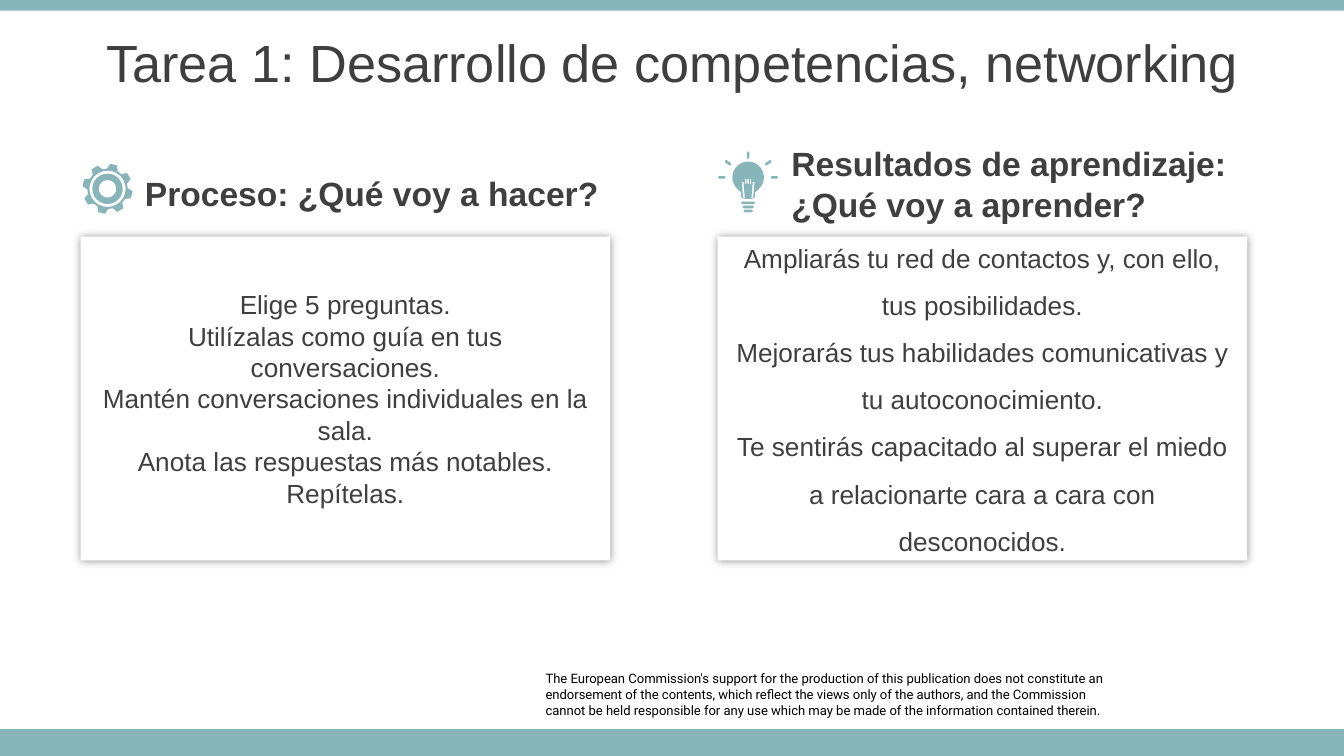
"""Build the task slide on a grid of 100 columns by 56.25 rows."""
import dataclasses
import math
import typing

import lxml.etree
import pptx
import pptx.dml.color
import pptx.enum.shapes
import pptx.enum.text
import pptx.oxml.ns
import pptx.util

TEAL = pptx.dml.color.RGBColor(0x87, 0xB5, 0xBA)
WHITE = pptx.dml.color.RGBColor(0xFF, 0xFF, 0xFF)
BLACK = pptx.dml.color.RGBColor(0x00, 0x00, 0x00)
GRAY = pptx.dml.color.RGBColor(0x3F, 0x3F, 0x3F)
COLUMNS, ROWS = 100, 56.25
CENTER = pptx.enum.text.PP_ALIGN.CENTER
LEFT = pptx.enum.text.PP_ALIGN.LEFT
MIDDLE = pptx.enum.text.MSO_ANCHOR.MIDDLE
Point = tuple[float, float]
Contour = list[Point]


@dataclasses.dataclass(frozen=True)
class Area:
    """A rectangle in grid cells."""
    column: float
    row: float
    columns: float
    rows: float

    def lengths(self) -> tuple[int, int, int, int]:
        """Return left, top, width and height."""
        return cells(self.column), cells(self.row), cells(self.columns), cells(self.rows)


@dataclasses.dataclass(frozen=True)
class TextStyle:
    """The look of a text."""
    size: float
    font: str = "Arial"
    color: pptx.dml.color.RGBColor = GRAY
    bold: bool = False
    alignment: typing.Any = LEFT
    line_spacing: float = 1.0


@dataclasses.dataclass(frozen=True)
class Panel:
    """A heading above a shadowed card."""
    column: float
    heading: str
    heading_area: Area
    lines: tuple[str, ...]
    line_spacing: float
    bottom_inset: float


HEADING = TextStyle(18, bold=True)
PANELS = (
    Panel(6, "Proceso: ¿Qué voy a hacer?", Area(9.8, 12.8, 40.2, 3.1),
          ("Elige 5 preguntas.",
           "Utilízalas como guía en tus conversaciones.",
           "Mantén conversaciones individuales en la sala.",
           "Anota las respuestas más notables.",
           "Repítelas."), 1.0, 0.5),
    Panel(53.4, "Resultados de aprendizaje: ¿Qué voy a aprender?", Area(57.9, 12.1, 35.6, 3.1),
          ("Ampliarás tu red de contactos y, con ello, tus posibilidades.",
           "Mejorarás tus habilidades comunicativas y tu autoconocimiento.",
           "Te sentirás capacitado al superar el miedo a relacionarte cara a cara con desconocidos."),
          1.5, 1.5),
)
DISCLAIMER = (
    "The European Commission's support for the production of this publication does not constitute an "
    "endorsement of the contents, which reflect the views only of the authors, and the Commission",
    "cannot be held responsible for any use which may be made of the information contained therein.",
)


def cells(count: float) -> int:
    """Convert grid cells to a length."""
    return pptx.util.Inches(count / 10)


def write(shape: typing.Any, lines: typing.Sequence[str], style: TextStyle) -> None:
    """Write one paragraph per line."""
    frame = shape.text_frame
    frame.word_wrap = True
    frame.auto_size = pptx.enum.text.MSO_AUTO_SIZE.NONE
    frame.vertical_anchor = MIDDLE
    for index, line in enumerate(lines):
        paragraph = frame.add_paragraph() if index else frame.paragraphs[0]
        paragraph.alignment = style.alignment
        paragraph.line_spacing = style.line_spacing
        run = paragraph.add_run()
        run.text = line
        run.font.name = style.font
        run.font.size = pptx.util.Pt(style.size)
        run.font.bold = style.bold
        run.font.color.rgb = style.color


def paint(shape: typing.Any, color: pptx.dml.color.RGBColor) -> None:
    """Give a shape a plain fill without line or shadow."""
    shape.shadow.inherit = False
    shape.fill.solid()
    shape.fill.fore_color.rgb = color
    shape.line.fill.background()


def add_rectangle(slide: typing.Any, area: Area, color: pptx.dml.color.RGBColor) -> typing.Any:
    """Add a plain rectangle."""
    shape = slide.shapes.add_shape(pptx.enum.shapes.MSO_SHAPE.RECTANGLE, *area.lengths())
    paint(shape, color)
    return shape


def add_glow(shape: typing.Any) -> None:
    """Put a soft shadow evenly around a shape."""
    effects = shape._element.spPr.find(pptx.oxml.ns.qn("a:effectLst"))
    shadow = lxml.etree.SubElement(effects, pptx.oxml.ns.qn("a:outerShdw"),
                                   blurRad=str(int(pptx.util.Pt(5))), algn="ctr", rotWithShape="0")
    color = lxml.etree.SubElement(shadow, pptx.oxml.ns.qn("a:srgbClr"), val=str(BLACK))
    lxml.etree.SubElement(color, pptx.oxml.ns.qn("a:alpha"), val="40000")


def add_panel(slide: typing.Any, panel: Panel) -> None:
    """Add a card and its heading."""
    card = add_rectangle(slide, Area(panel.column, 17.6, 39.4, 24.1), WHITE)
    add_glow(card)
    write(card, panel.lines, TextStyle(14, alignment=CENTER, line_spacing=panel.line_spacing))
    card.text_frame.margin_bottom = cells(panel.bottom_inset)
    heading = slide.shapes.add_textbox(*panel.heading_area.lengths())
    write(heading, [panel.heading], HEADING)


def polar(x: float, y: float, radius: float, degrees: float) -> Point:
    """Return the point at a clockwise angle from the top."""
    angle = math.radians(degrees)
    return x + radius * math.sin(angle), y - radius * math.cos(angle)


def arc(x: float, y: float, radius: float, start: float, end: float, steps: int) -> Contour:
    """Return evenly spaced points on an arc."""
    return [polar(x, y, radius, start + (end - start) * step / steps) for step in range(steps + 1)]


def pill(x: float, y: float, length: float, width: float, angle: float) -> Contour:
    """Return a bar with round ends, turned from the vertical."""
    reach = (length - width) / 2
    return [point for turn in (angle, angle + 180)
            for point in arc(*polar(x, y, reach, turn), width / 2, turn - 90, turn + 90, 2)]


def add_outline(slide: typing.Any, contours: typing.Sequence[Contour]) -> None:
    """Add one teal shape made of several contours."""
    scaled = [[(cells(x), cells(y)) for x, y in contour] for contour in contours]
    builder = slide.shapes.build_freeform(*scaled[0][0])
    for index, points in enumerate(scaled):
        if index:
            builder.move_to(*points[0])
        builder.add_line_segments(points[1:], close=True)
    paint(builder.convert_to_shape(), TEAL)


def gear(x: float, y: float) -> list[Contour]:
    """Return an eight-toothed wheel with a ring inside."""
    teeth = [polar(x, y, radius, 14 + 45 * tooth + offset)
             for tooth in range(8)
             for radius, offset in ((1.5, -16), (1.87, -8), (1.87, 8), (1.5, 16))]
    return [teeth] + [arc(x, y, radius, 0, 345, 23) for radius in (1.35, 1.13, 0.65)]


def bulb(x: float, y: float) -> list[Contour]:
    """Return a lit bulb with filament, socket and rays."""
    glass = arc(x, y, 1.18, -140, 140, 16) + [
        (x + 0.53, y + 1.1), (x + 0.53, y + 1.45), (x + 0.35, y + 1.6),
        (x - 0.35, y + 1.6), (x - 0.53, y + 1.45), (x - 0.53, y + 1.1)]
    legs = [pill(x + side * 0.36, y + 0.95, 1.3, 0.13, side * 5) for side in (-1, 1)]
    filament = [pill(x + offset, y + 0.3, 0.42, 0.1, 0) for offset in (-0.18, 0, 0.18)]
    socket = [pill(x, y + 1.9 + 0.3 * step, 1.06 - 0.18 * step, 0.2, 90) for step in range(3)]
    rays = [pill(*polar(x, y, radius, angle), 0.58, 0.2, angle)
            for radius, angle in ((1.95, -90), (1.85, -54), (1.65, 0), (1.85, 54), (1.95, 90))]
    return [glass, *legs, *filament, *socket, *rays]


def main() -> None:
    """Build and save the slide."""
    presentation = pptx.Presentation()
    presentation.slide_width, presentation.slide_height = cells(COLUMNS), cells(ROWS)
    slide = presentation.slides.add_slide(presentation.slide_layouts[5])
    for row, rows in ((0, 0.8), (54.25, 2)):
        add_rectangle(slide, Area(0, row, COLUMNS, rows), TEAL)
    title = slide.shapes.title
    title.left, title.top, title.width, title.height = Area(0, 1.4, COLUMNS, 6.3).lengths()
    write(title, ["Tarea 1: Desarrollo de competencias, networking"], TextStyle(28, alignment=CENTER))
    add_outline(slide, gear(8, 14.05))
    add_outline(slide, bulb(55.67, 13.2))
    for panel in PANELS:
        add_panel(slide, panel)
    disclaimer = slide.shapes.add_textbox(*Area(40.6, 49.9, 41.7, 3.5).lengths())
    write(disclaimer, DISCLAIMER, TextStyle(7, "Roboto", BLACK))
    frame = disclaimer.text_frame
    frame.vertical_anchor = pptx.enum.text.MSO_ANCHOR.TOP
    frame.margin_left = frame.margin_top = frame.margin_right = frame.margin_bottom = 0
    presentation.save("out.pptx")


if __name__ == "__main__":
    main()
